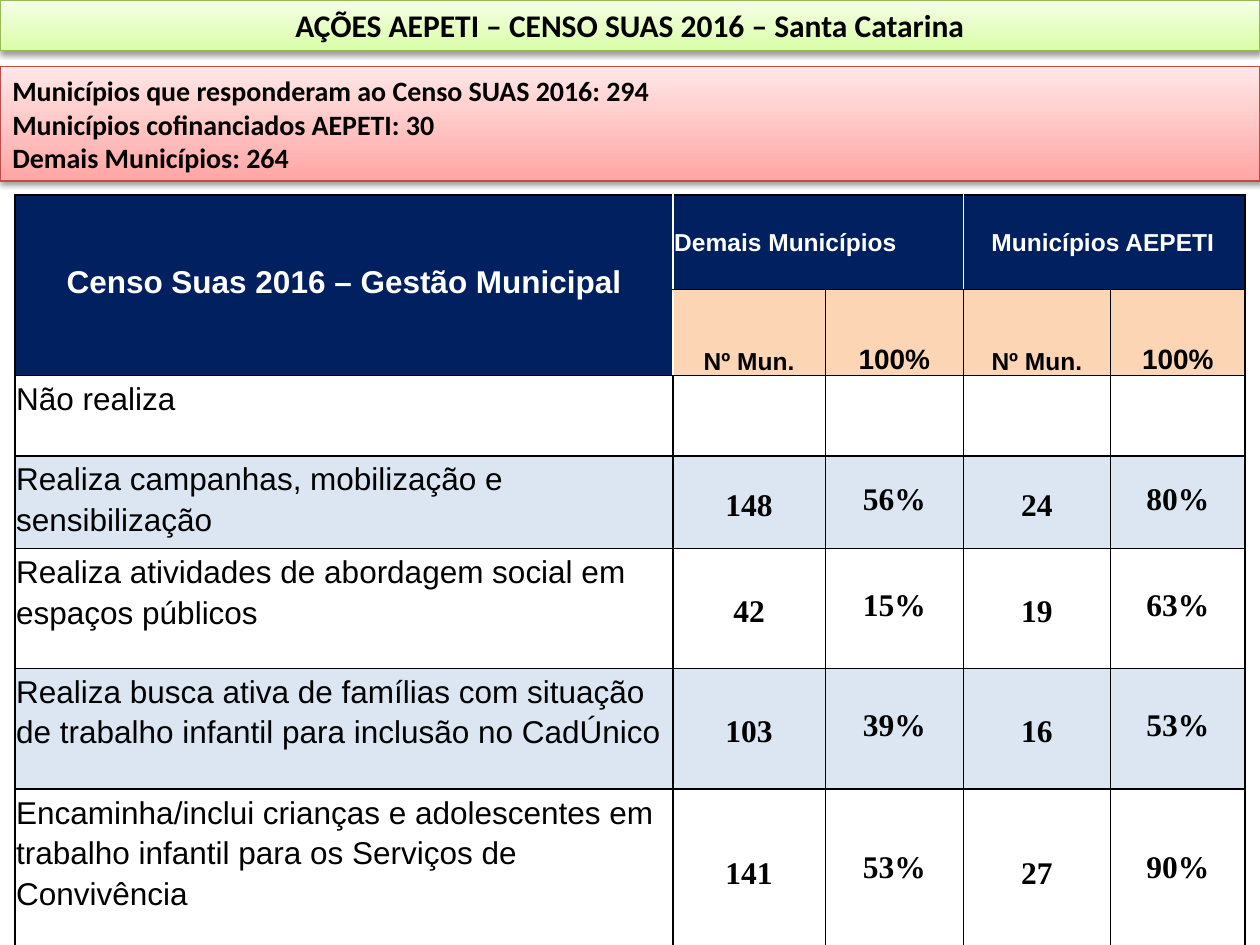
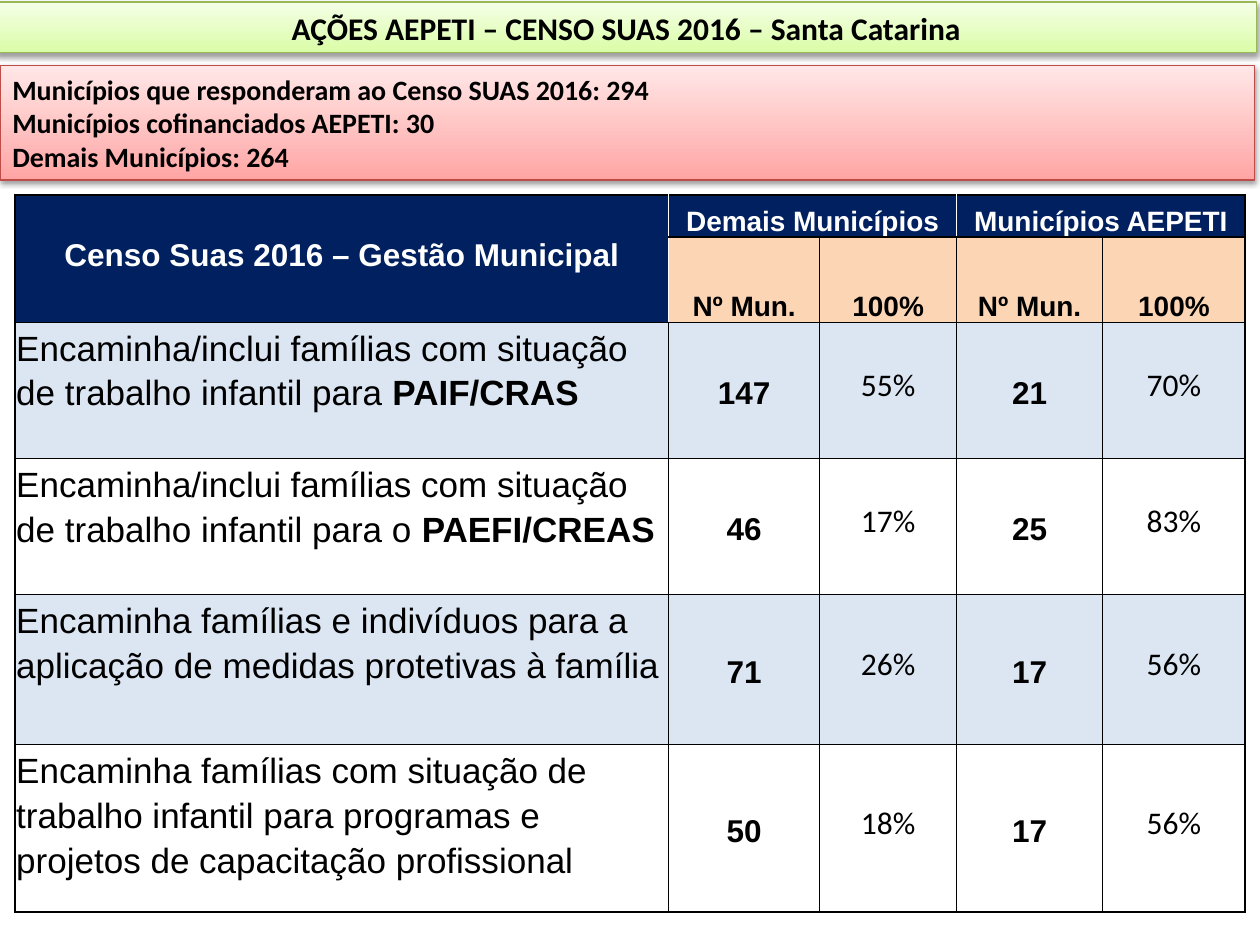
from lxml import etree
from pptx import Presentation
from pptx.dml.color import RGBColor
from pptx.enum.shapes import MSO_SHAPE
from pptx.enum.text import MSO_ANCHOR, PP_ALIGN
from pptx.oxml.ns import qn
from pptx.util import Pt

RECTANGLE = MSO_SHAPE.RECTANGLE
LEFT, CENTER = PP_ALIGN.LEFT, PP_ALIGN.CENTER
TOP, MIDDLE, BOTTOM = MSO_ANCHOR.TOP, MSO_ANCHOR.MIDDLE, MSO_ANCHOR.BOTTOM


class Theme:
    black, white = "000000", "FFFFFF"
    navy, peach, pale_blue = "002060", "FCD5B5", "DCE6F2"
    green = ("DAFDA7", "F5FFE7", "98B955")  # bottom, top, outline
    red = ("FFA6A5", "FFE7E7", "BF4C48")
    band_font, table_font = "Calibri", "Arial"
    title_size, summary_size, heading_size, value_size = 18, 16, 18, 18
    exact_spacing, loose_spacing = Pt(16.2), 1.15
    cell_margin = 0.7


TITLE = "AÇÕES AEPETI – CENSO SUAS 2016 – Santa Catarina"
SUMMARY = ("Municípios que responderam ao Censo SUAS 2016: 294\n"
           "Municípios cofinanciados AEPETI: 30\n"
           "Demais Municípios: 264")
HEADING = "Censo Suas 2016 – Gestão Municipal"
GROUPS = ["Demais Municípios", "Municípios AEPETI"]
WHITE_EDGES = {
    "L": {(0, 1), (0, 3), (1, 1)},
    "R": {(0, 0), (1, 0), (0, 1), (0, 2)},
    "T": set(),
    "B": set(),
}

# Each action: label, bold ending of the label, then count and share per group
SLIDES = [
    dict(
        title_box=(0, 0, 720, 29), summary_box=(0, 38, 720, 65.5),
        columns=[376, 87, 79, 84, 77],
        rows=[54, 49, 46, 53, 68.5, 69, 93],
        group_size=14, group_align=LEFT, group_anchor=MIDDLE, group_indents=[0.7, 16],
        count_size=14, share_size=16, label_size=18, first_shaded=1,
        count_font="Times New Roman", share_font="Times New Roman", share_bold=True,
        actions=[
            ("Não realiza", "", "", "", "", ""),
            ("Realiza campanhas, mobilização e sensibilização", "",
             "148", "56%", "24", "80%"),
            ("Realiza atividades de abordagem social em espaços públicos", "",
             "42", "15%", "19", "63%"),
            ("Realiza busca ativa de famílias com situação de trabalho infantil "
             "para inclusão no CadÚnico", "", "103", "39%", "16", "53%"),
            ("Encaminha/inclui crianças e adolescentes em trabalho infantil "
             "para os Serviços de Convivência", "", "141", "53%", "27", "90%"),
        ],
    ),
    dict(
        title_box=(-2, 1.2, 720, 29), summary_box=(0, 37.3, 717, 65.5),
        columns=[373.5, 86.3, 78.3, 83.4, 81.5],
        rows=[24, 48.7, 77.8, 77.8, 85.7, 95.8],
        group_size=16, group_align=CENTER, group_anchor=BOTTOM, group_indents=[0.7, 0.7],
        count_size=16, share_size=16, label_size=20, first_shaded=0,
        count_font="Arial", share_font="Calibri", share_bold=False,
        actions=[
            ("Encaminha/inclui famílias com situação de trabalho infantil para ",
             "PAIF/CRAS", "147", "55%", "21", "70%"),
            ("Encaminha/inclui famílias com situação de trabalho infantil para o ",
             "PAEFI/CREAS", "46", "17%", "25", "83%"),
            ("Encaminha famílias e indivíduos para a aplicação de medidas "
             "protetivas à família", "", "71", "26%", "17", "56%"),
            ("Encaminha famílias com situação de trabalho infantil para programas "
             "e projetos de capacitação profissional", "", "50", "18%", "17", "56%"),
        ],
    ),
]


def add_band(slide, box, text, colours, size, align):
    """Full-width gradient band with a soft shadow."""
    bottom, top, outline = colours
    shape = slide.shapes.add_shape(RECTANGLE, *[Pt(value) for value in box])
    shape.fill.gradient()
    shape.fill.gradient_angle = 90
    for stop, colour in zip(shape.fill.gradient_stops, (bottom, top)):
        stop.color.rgb = RGBColor.from_string(colour)
    shape.line.color.rgb = RGBColor.from_string(outline)
    shape.line.width = Pt(0.75)

    shape.shadow.inherit = False
    effects = shape.element.spPr.find(qn("a:effectLst"))
    shadow = etree.SubElement(effects, qn("a:outerShdw"), blurRad="40000",
                              dist="20000", dir="5400000", rotWithShape="0")
    shade = etree.SubElement(shadow, qn("a:srgbClr"), val=Theme.black)
    etree.SubElement(shade, qn("a:alpha"), val="38000")

    text_frame = shape.text_frame
    text_frame.text = text
    text_frame.word_wrap = True
    text_frame.vertical_anchor = MIDDLE
    for paragraph in text_frame.paragraphs:
        paragraph.alignment = align
        font = paragraph.runs[0].font
        font.name, font.size, font.bold = Theme.band_font, Pt(size), True
        font.color.rgb = RGBColor.from_string(Theme.black)


def write_cell(cell, text, size, font_name=Theme.table_font, bold=True,
               colour=Theme.black, align=CENTER, anchor=MIDDLE,
               spacing=Theme.exact_spacing, bold_ending=""):
    cell.vertical_anchor = anchor
    paragraph = cell.text_frame.paragraphs[0]
    paragraph.text = text
    if bold_ending:
        paragraph.add_run().text = bold_ending
    paragraph.alignment = align
    paragraph.line_spacing = spacing
    for index, run in enumerate(paragraph.runs):
        run.font.name, run.font.size = font_name, Pt(size)
        run.font.bold = bold or index > 0
        run.font.color.rgb = RGBColor.from_string(colour)


presentation = Presentation()
presentation.slide_width, presentation.slide_height = Pt(720), Pt(540)

for page in SLIDES:
    slide = presentation.slides.add_slide(presentation.slide_layouts[6])

    # Table grid
    columns, rows = page["columns"], page["rows"]
    frame = slide.shapes.add_table(len(rows), len(columns), Pt(8.6), Pt(111.5),
                                   Pt(sum(columns)), Pt(sum(rows)))
    table = frame.table
    table.first_row = table.horz_banding = False
    for column, width in zip(table.columns, columns):
        column.width = Pt(width)
    for row, height in zip(table.rows, rows):
        row.height = Pt(height)

    # Margins, borders and fills
    for r in range(len(rows)):
        for c in range(len(columns)):
            cell = table.cell(r, c)
            cell.margin_left = cell.margin_right = cell.margin_top = Pt(Theme.cell_margin)
            cell.margin_bottom = 0
            properties = cell._tc.get_or_add_tcPr()
            for side, white_cells in WHITE_EDGES.items():
                edge = etree.SubElement(properties, qn(f"a:ln{side}"), w=str(Pt(1)))
                solid = etree.SubElement(edge, qn("a:solidFill"))
                edge_colour = Theme.white if (r, c) in white_cells else Theme.black
                etree.SubElement(solid, qn("a:srgbClr"), val=edge_colour)
            if r == 0 or (r == 1 and c == 0):
                fill = Theme.navy
            elif r == 1:
                fill = Theme.peach
            else:
                shaded = (r - 2) % 2 == page["first_shaded"]
                fill = Theme.pale_blue if shaded else Theme.white
            cell.fill.solid()
            cell.fill.fore_color.rgb = RGBColor.from_string(fill)

    # Header
    table.cell(0, 0).merge(table.cell(1, 0))
    write_cell(table.cell(0, 0), HEADING, Theme.heading_size, colour=Theme.white)
    for index, group in enumerate(GROUPS):
        c = 1 + 2 * index
        table.cell(0, c).merge(table.cell(0, c + 1))
        write_cell(table.cell(0, c), group, page["group_size"], colour=Theme.white,
                   align=page["group_align"], anchor=page["group_anchor"])
        table.cell(0, c).margin_left = Pt(page["group_indents"][index])
        write_cell(table.cell(1, c), "Nº Mun.", page["count_size"], anchor=BOTTOM)
        write_cell(table.cell(1, c + 1), "100%", page["share_size"], anchor=BOTTOM)

    # Actions
    for r, (label, ending, *values) in enumerate(page["actions"], start=2):
        write_cell(table.cell(r, 0), label, page["label_size"], bold=False, align=LEFT,
                   anchor=TOP, spacing=Theme.loose_spacing, bold_ending=ending)
        for c, value in enumerate(values, start=1):
            if not value:
                continue
            if c % 2:
                write_cell(table.cell(r, c), value, Theme.value_size,
                           page["count_font"], spacing=Theme.loose_spacing)
            else:
                write_cell(table.cell(r, c), value, Theme.value_size,
                           page["share_font"], page["share_bold"])

    # Title and summary bands
    add_band(slide, page["title_box"], TITLE, Theme.green, Theme.title_size, CENTER)
    add_band(slide, page["summary_box"], SUMMARY, Theme.red, Theme.summary_size, LEFT)

presentation.save("out.pptx")
